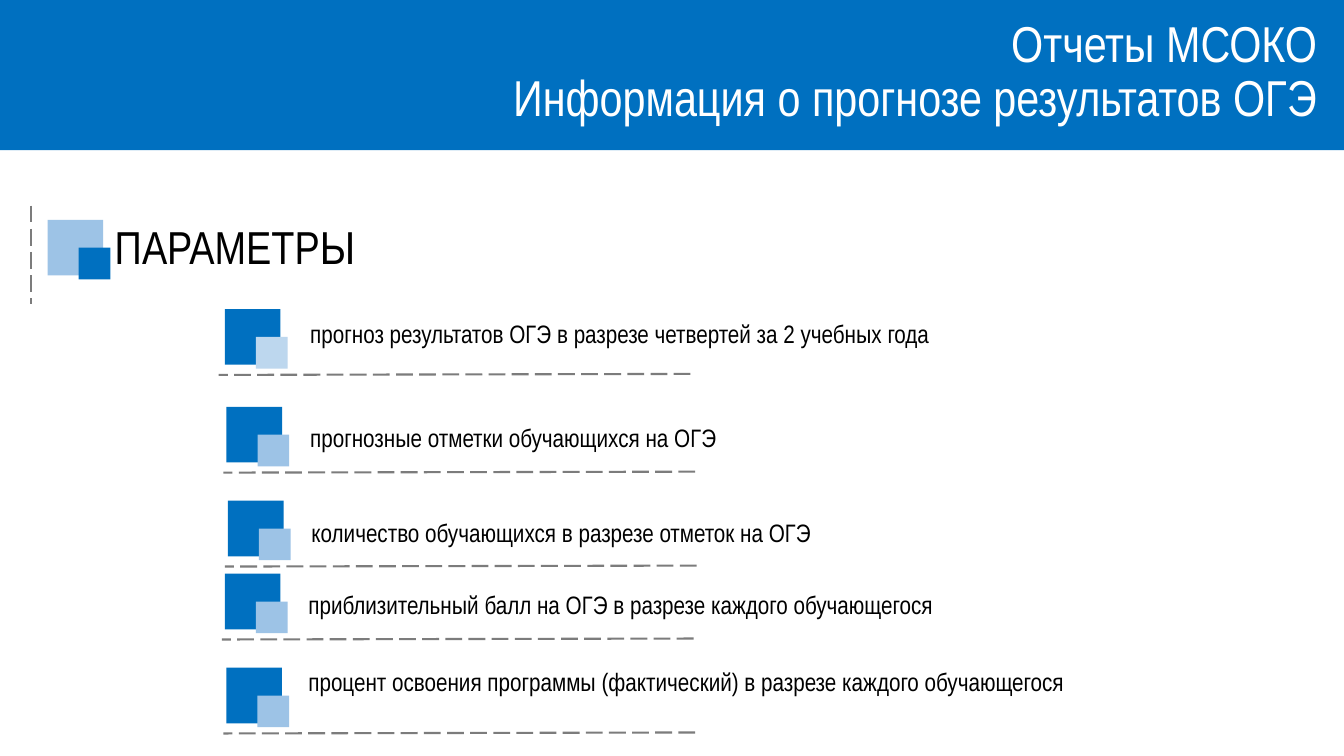
from dataclasses import dataclass
from typing import Any

import pptx
import pptx.dml.color
import pptx.enum.dml
import pptx.enum.shapes
import pptx.enum.text
import pptx.oxml.ns
import pptx.util
from lxml import etree

Pt = pptx.util.Pt
RGBColor = pptx.dml.color.RGBColor
PP_ALIGN = pptx.enum.text.PP_ALIGN
MSO_ANCHOR = pptx.enum.text.MSO_ANCHOR

BLUE = RGBColor(0x00, 0x70, 0xC0)
LIGHT_BLUE = RGBColor(0x9D, 0xC3, 0xE6)
PALE_BLUE = RGBColor(0xBD, 0xD7, 0xEE)
GREY = RGBColor(0x7C, 0x7C, 0x7C)
BLACK = RGBColor(0x00, 0x00, 0x00)
WHITE = RGBColor(0xFF, 0xFF, 0xFF)

FONT = "Arial Narrow"
SLIDE_WIDTH, SLIDE_HEIGHT = 960, 540
LARGE_SIDE, SMALL_SIDE = 39.8, 22.6
SMALL_SHIFT_X, SMALL_SHIFT_Y = 22.2, 19.9
RULE_LENGTH, RULE_DROP, RULE_RISE = 337, 47, 0.7


@dataclass(frozen=True)
class Marker:
    left: float
    top: float
    large: RGBColor
    small: RGBColor


@dataclass(frozen=True)
class Caption:
    lines: tuple[str, ...]
    left: float
    top: float
    width: float
    height: float
    size: float = 18
    color: RGBColor = BLACK
    align: Any = PP_ALIGN.LEFT
    anchor: Any = MSO_ANCHOR.TOP
    spacing: float = 1.0


@dataclass(frozen=True)
class Parameter:
    marker: Marker
    caption: Caption
    rule_left: float


TITLE = Caption(
    ("Отчеты МСОКО", "Информация о прогнозе результатов ОГЭ"),
    120, 0, 828, 104.4, 36, WHITE, PP_ALIGN.RIGHT, MSO_ANCHOR.MIDDLE, 0.9,
)
HEADING = Caption(("ПАРАМЕТРЫ",), 74.9, 152.6, 235.4, 87, 33)
HEADING_MARKER = Marker(34, 157, LIGHT_BLUE, BLUE)

PARAMETERS = (
    Parameter(
        Marker(160.6, 220.8, BLUE, PALE_BLUE),
        Caption(("прогноз результатов ОГЭ в разрезе четвертей за 2 учебных года",),
                214.5, 223.9, 527, 29),
        156.2,
    ),
    Parameter(
        Marker(161.8, 290.6, BLUE, LIGHT_BLUE),
        Caption(("прогнозные отметки обучающихся на ОГЭ",), 214.5, 298.1, 391, 51),
        159.6,
    ),
    Parameter(
        Marker(162.8, 357.7, BLUE, LIGHT_BLUE),
        Caption(("количество обучающихся в разрезе отметок на ОГЭ",),
                215.4, 365.6, 444.2, 29),
        160.6,
    ),
    Parameter(
        Marker(160.6, 409.8, BLUE, LIGHT_BLUE),
        Caption(("приблизительный балл на ОГЭ в разрезе каждого обучающегося",),
                213.2, 417.6, 571.7, 51),
        158.4,
    ),
    Parameter(
        Marker(161.7, 476.9, BLUE, LIGHT_BLUE),
        Caption(("процент освоения программы (фактический) в разрезе каждого обучающегося",),
                213.2, 472.3, 692, 51),
        159.6,
    ),
)


def apply_format(target: Any, values: dict[str, Any]) -> None:
    for attribute, value in values.items():
        setattr(target, attribute, value)


def draw_rectangle(shapes: Any, left: float, top: float, width: float,
                   height: float, color: RGBColor) -> None:
    rectangle = shapes.add_shape(
        pptx.enum.shapes.MSO_SHAPE.RECTANGLE, Pt(left), Pt(top), Pt(width), Pt(height)
    )
    rectangle.shadow.inherit = False
    rectangle.fill.solid()
    rectangle.fill.fore_color.rgb = color
    rectangle.line.fill.background()


def draw_marker(shapes: Any, marker: Marker) -> None:
    squares = shapes.add_group_shape().shapes
    draw_rectangle(squares, marker.left, marker.top, LARGE_SIDE, LARGE_SIDE, marker.large)
    draw_rectangle(squares, marker.left + SMALL_SHIFT_X, marker.top + SMALL_SHIFT_Y,
                   SMALL_SIDE, SMALL_SIDE, marker.small)


def draw_dashes(shapes: Any, start: tuple[float, float], end: tuple[float, float]) -> None:
    dashes = shapes.add_connector(
        pptx.enum.shapes.MSO_CONNECTOR.STRAIGHT, *map(Pt, start + end)
    )
    dashes.line.color.rgb = GREY
    apply_format(dashes.line, {
        "width": Pt(1.5),
        "dash_style": pptx.enum.dml.MSO_LINE_DASH_STYLE.LONG_DASH,
    })
    etree.SubElement(dashes.element.spPr, pptx.oxml.ns.qn("a:effectLst"))


def draw_caption(shapes: Any, caption: Caption) -> None:
    box = shapes.add_textbox(
        Pt(caption.left), Pt(caption.top), Pt(caption.width), Pt(caption.height)
    )
    frame = box.text_frame
    apply_format(frame, {
        "word_wrap": True,
        "vertical_anchor": caption.anchor,
        "text": "\n".join(caption.lines),
    })
    for paragraph in frame.paragraphs:
        apply_format(paragraph, {
            "alignment": caption.align,
            "line_spacing": caption.spacing,
        })
        font = paragraph.runs[0].font
        apply_format(font, {"name": FONT, "size": Pt(caption.size)})
        font.color.rgb = caption.color


def draw_parameter(shapes: Any, parameter: Parameter) -> None:
    draw_marker(shapes, parameter.marker)
    rule_top = parameter.marker.top + RULE_DROP
    draw_dashes(shapes, (parameter.rule_left + RULE_LENGTH, rule_top - RULE_RISE),
                (parameter.rule_left, rule_top))
    draw_caption(shapes, parameter.caption)


def main() -> None:
    presentation = pptx.Presentation()
    apply_format(presentation, {
        "slide_width": Pt(SLIDE_WIDTH),
        "slide_height": Pt(SLIDE_HEIGHT),
    })
    shapes = presentation.slides.add_slide(presentation.slide_layouts[6]).shapes

    draw_rectangle(shapes, 0, 0, SLIDE_WIDTH, 107.3, BLUE)
    draw_caption(shapes, TITLE)
    draw_caption(shapes, HEADING)
    draw_dashes(shapes, (22.2, 146.9), (22.2, 217.4))
    draw_marker(shapes, HEADING_MARKER)
    for parameter in PARAMETERS:
        draw_parameter(shapes, parameter)

    presentation.save("out.pptx")


if __name__ == "__main__":
    main()
